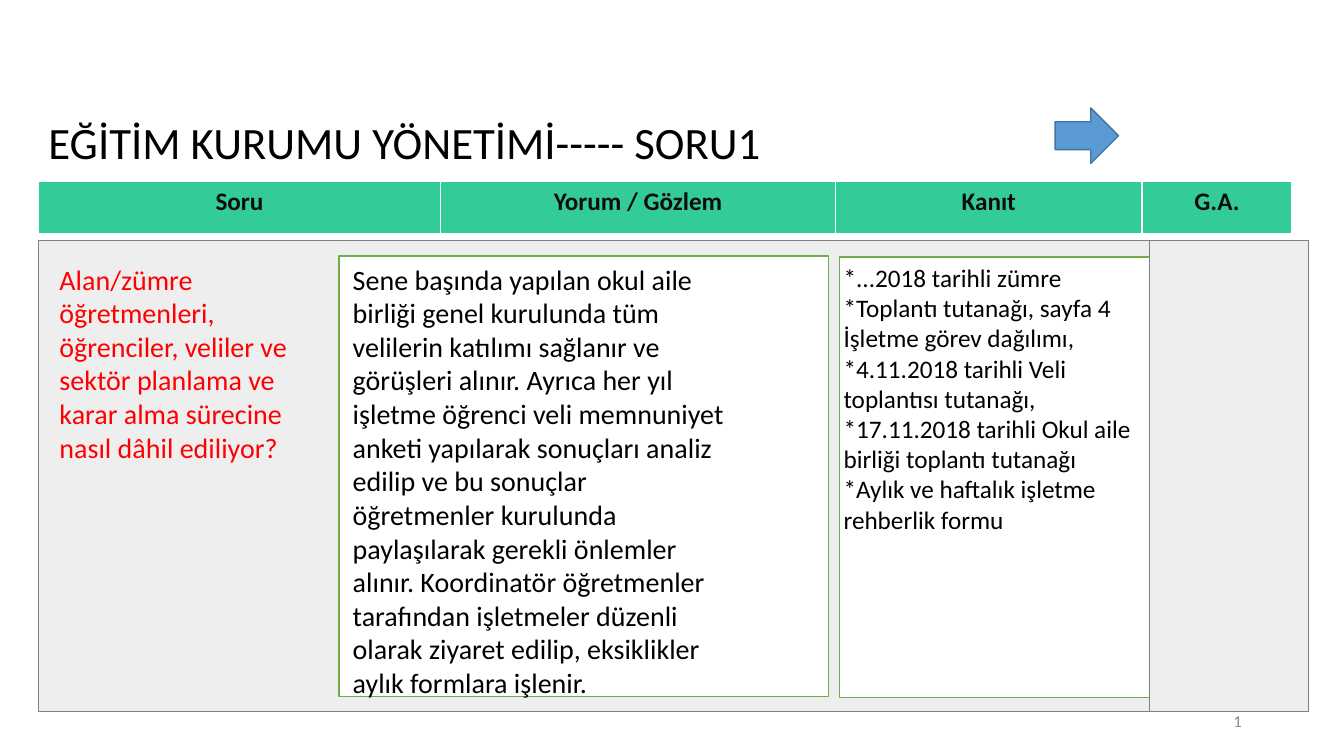
from dataclasses import dataclass

import lxml.etree
import pptx
import pptx.dml.color
import pptx.enum.shapes
import pptx.enum.text
import pptx.oxml
import pptx.oxml.ns
import pptx.util

Cm = pptx.util.Cm
Pt = pptx.util.Pt
ALIGN = pptx.enum.text.PP_ALIGN
ANCHOR = pptx.enum.text.MSO_ANCHOR
SHAPE = pptx.enum.shapes.MSO_SHAPE


@dataclass(frozen=True)
class Theme:
    font: str = "Calibri"
    text: str = "000000"
    heading: str = "0D0D0D"
    question: str = "FF0000"
    number: str = "8C8C8C"
    header: str = "33CC99"
    panel: str = "EEEEEE"
    panel_line: str = "808080"
    white: str = "FFFFFF"
    green: str = "70AD47"
    arrow: str = "5B9BD5"
    arrow_line: str = "43739E"
    title_size: int = 32
    body_size: int = 20
    small_size: int = 18
    number_size: int = 12


THEME = Theme()

HEADINGS = ["Soru", "Yorum / Gözlem", "Kanıt", "G.A."]
COLUMN_WIDTHS = [10.13, 9.96, 7.72, 3.78]
QUESTION = ("Alan/zümre öğretmenleri, öğrenciler, veliler ve sektör planlama ve "
            "karar alma sürecine nasıl dâhil ediliyor?")
COMMENT = ("Sene başında yapılan okul aile birliği genel kurulunda tüm velilerin "
           "katılımı sağlanır ve görüşleri alınır. Ayrıca her yıl işletme öğrenci "
           "veli memnuniyet anketi yapılarak sonuçları analiz edilip ve bu sonuçlar "
           "öğretmenler kurulunda paylaşılarak gerekli önlemler alınır. Koordinatör "
           "öğretmenler tarafından işletmeler düzenli olarak ziyaret edilip, "
           "eksiklikler aylık formlara işlenir.")
EVIDENCE = "\n".join([
    "*...2018 tarihli zümre *Toplantı tutanağı, sayfa 4",
    "İşletme görev dağılımı,",
    "*4.11.2018 tarihli Veli toplantısı tutanağı,",
    "*17.11.2018 tarihli Okul aile birliği toplantı tutanağı",
    "*Aylık ve haftalık işletme rehberlik formu",
])


def rgb(color):
    return pptx.dml.color.RGBColor.from_string(color)


def add_panel(slide, box, fill, line=None, line_width=1, kind=SHAPE.RECTANGLE):
    shape = slide.shapes.add_shape(kind, *map(Cm, box))
    shape.shadow.inherit = False
    shape.fill.solid()
    shape.fill.fore_color.rgb = rgb(fill)
    if line:
        shape.line.color.rgb = rgb(line)
        shape.line.width = Pt(line_width)
    else:
        shape.line.fill.background()
    return shape


def set_text(text_frame, text, size, color, align=ALIGN.LEFT, anchor=ANCHOR.TOP, bold=False):
    text_frame.text = text
    text_frame.word_wrap = True
    text_frame.vertical_anchor = anchor
    for paragraph in text_frame.paragraphs:
        paragraph.alignment = align
        for run in paragraph.runs:
            run.font.name = THEME.font
            run.font.size = Pt(size)
            run.font.bold = bold
            run.font.color.rgb = rgb(color)


def add_text(slide, box, text, size, color, **style):
    text_box = slide.shapes.add_textbox(*map(Cm, box))
    set_text(text_box.text_frame, text, size, color, **style)
    return text_box


def set_borders(cell):
    properties = cell._tc.get_or_add_tcPr()
    for index, (side, width) in enumerate([("L", 1), ("R", 1), ("T", 1), ("B", 3)]):
        border = pptx.oxml.parse_xml(
            f'<a:ln{side} {pptx.oxml.ns.nsdecls("a")} w="{Pt(width)}"><a:solidFill>'
            f'<a:srgbClr val="{THEME.white}"/></a:solidFill></a:ln{side}>')
        properties.insert(index, border)


def add_title(slide, box):
    left, top, width, height = box
    title = add_text(slide, box, "EĞİTİM KURUMU YÖNETİMİ----- SORU1",
                     THEME.title_size, THEME.text, anchor=ANCHOR.MIDDLE)
    title.text_frame.paragraphs[0].line_spacing = 0.9
    add_panel(slide, (left + width + 0.4, top - 0.2, 1.6, 1.4), THEME.arrow,
              THEME.arrow_line, kind=SHAPE.RIGHT_ARROW)


def add_header(slide, box):
    table = slide.shapes.add_table(1, len(HEADINGS), *map(Cm, box)).table
    for column, width in zip(table.columns, COLUMN_WIDTHS):
        column.width = Cm(width)
    for cell, heading in zip(table.rows[0].cells, HEADINGS):
        cell.fill.solid()
        cell.fill.fore_color.rgb = rgb(THEME.header)
        set_borders(cell)
        set_text(cell.text_frame, heading, THEME.small_size, THEME.heading,
                 align=ALIGN.CENTER, bold=True)


def add_answers(slide, box):
    left, top, width, height = box
    text_top = top + 0.43
    add_panel(slide, box, THEME.panel, THEME.panel_line, 0.75)

    # Question
    question = add_panel(slide, (left + 0.28, text_top, 6.96, 5.38), THEME.panel)
    set_text(question.text_frame, QUESTION, THEME.body_size, THEME.question)

    # Comment
    add_panel(slide, (left + 7.57, top + 0.4, 12.34, 11.1), THEME.white, THEME.green)
    add_text(slide, (left + 7.67, text_top, 10, 11.38), COMMENT, THEME.body_size, THEME.text)

    # Evidence
    add_panel(slide, (left + 20.19, text_top, 8.66, 11.1), THEME.white, THEME.green)
    add_text(slide, (left + 20.04, text_top, 8.08, 7.19), EVIDENCE,
             THEME.small_size, THEME.text)

    # Score column, flush with the right edge
    score_width = 4.01
    add_panel(slide, (left + width - score_width, top, score_width, height),
              THEME.panel, THEME.panel_line, 0.75)


def add_slide_number(slide, box):
    number = add_text(slide, box, "2", THEME.number_size, THEME.number,
                      align=ALIGN.RIGHT, anchor=ANCHOR.MIDDLE)
    # Turn the run into a slide number field
    run = number.text_frame.paragraphs[0].runs[0]._r
    field = lxml.etree.Element(pptx.oxml.ns.qn("a:fld"), type="slidenum",
                               id="{B6F15528-21DE-4FAA-801E-634DDDAF4B2B}")
    run.getparent().replace(run, field)
    field.extend(list(run))


def main():
    presentation = pptx.Presentation()
    presentation.slide_width = Cm(33.87)
    presentation.slide_height = Cm(19.05)
    slide = presentation.slides.add_slide(presentation.slide_layouts[6])
    margin = 0.97
    add_title(slide, (margin, 2.92, 25.22, 1.45))
    add_header(slide, (margin, 4.57, sum(COLUMN_WIDTHS), 1.35))
    add_answers(slide, (margin, 6.05, 32, 11.89))
    add_slide_number(slide, (23.93, 17.65, 7.62, 1.02))
    presentation.save("out.pptx")


if __name__ == "__main__":
    main()
